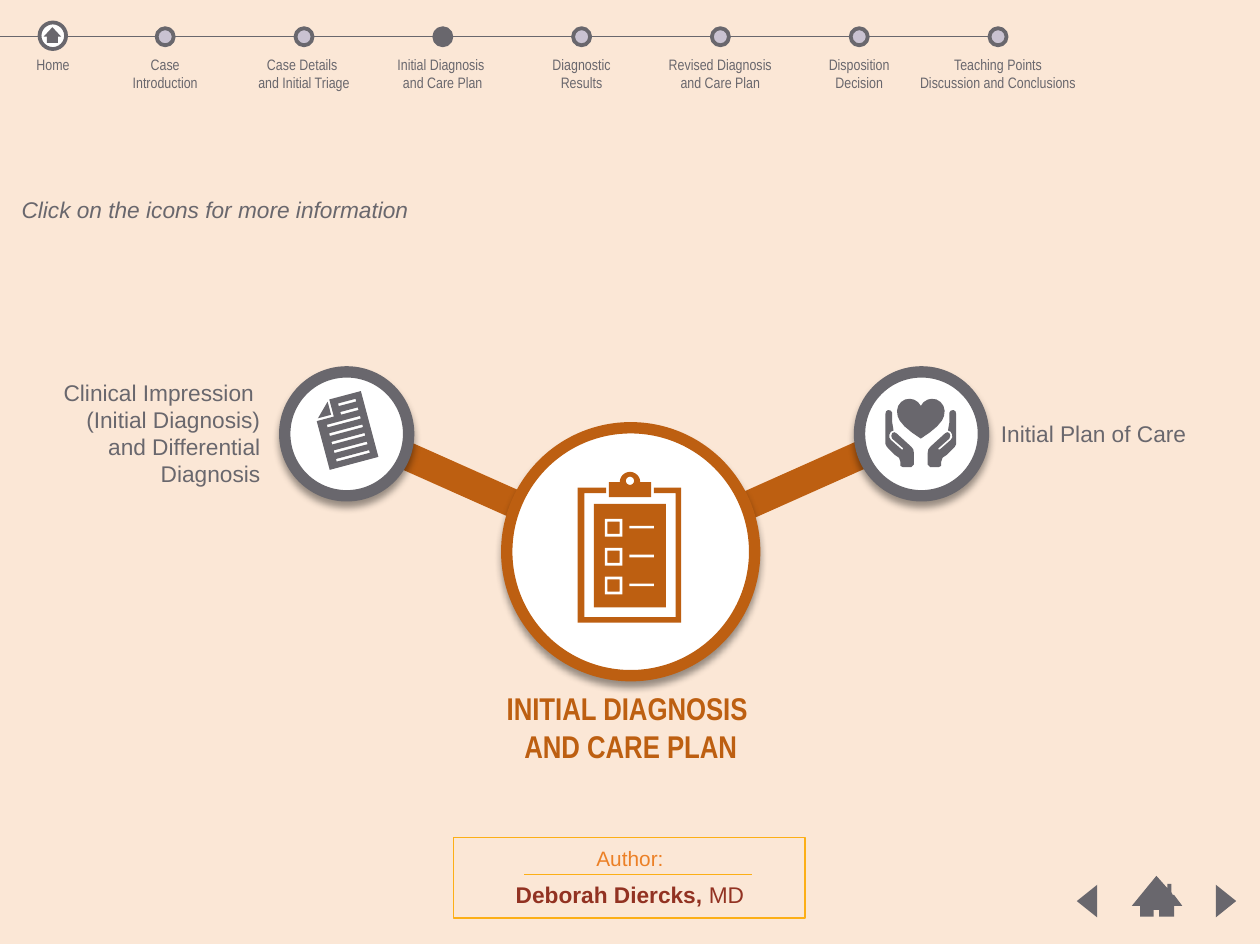
from dataclasses import dataclass
from math import cos, pi, sin
from typing import NamedTuple

from lxml.etree import SubElement
from pptx import Presentation
from pptx.dml.color import RGBColor
from pptx.enum.shapes import MSO_CONNECTOR, MSO_SHAPE
from pptx.enum.text import MSO_AUTO_SIZE, PP_ALIGN
from pptx.oxml.ns import qn
from pptx.util import Emu, Inches, Pt

COLUMNS, ROWS = 925, 693
CELL = Inches(0.01)
GREY, RUST, WHITE, LILAC = "69676D", "BD5F11", "FFFFFF", "C9C2D1"
CREAM, GOLD, ORANGE, MAROON = "FBE6D4", "FCAF17", "EC8026", "923222"
STOP_PITCH, TRACK_ROW, FIRST_STOP, STOP_SIZE = 101.9, 27, 121.3, 12.5
HEART_AXIS = 676

Points = list[tuple[float, float]]


class Box(NamedTuple):
    """Left, top, width and height in grid cells."""
    left: float
    top: float
    width: float
    height: float

    def emu(self) -> list[Emu]:
        return [cells(side) for side in self]


@dataclass
class Label:
    text: str
    box: Box
    size: float = 12
    color: str = GREY
    font: str = "Arial"
    align: PP_ALIGN = PP_ALIGN.CENTER
    bold: bool = False
    italic: bool = False
    regular_ending: str = ""
    margin: float | None = None


@dataclass
class Stop:
    text: str
    label_width: float
    fill: str = LILAC


STOPS = [
    Stop("Case\vIntroduction", 58),
    Stop("Case Details \vand Initial Triage", 78),
    Stop("Initial Diagnosis \nand Care Plan", 77, GREY),
    Stop("Diagnostic\vResults", 53),
    Stop("Revised Diagnosis\vand Care Plan", 86),
    Stop("Disposition\vDecision", 55),
    Stop("Teaching Points\vDiscussion and Conclusions", 125),
]
LABELS = [
    Label("Initial Plan of Care", Box(725, 303, 162, 30), align=PP_ALIGN.LEFT),
    Label("Clinical Impression \v(Initial Diagnosis)\vand Differential Diagnosis",
          Box(13, 273, 188, 91), align=PP_ALIGN.RIGHT),
    Label("INITIAL DIAGNOSIS \nAND CARE PLAN", Box(331, 501, 264, 66), 16.6, RUST,
          "Arial Narrow", bold=True),
    Label("Author:", Box(395, 616, 135, 29), 11, ORANGE),
    Label("Deborah Diercks, ", Box(366, 642, 193, 30), color=MAROON, bold=True,
          regular_ending="MD"),
    Label("Click on the icons for more information", Box(6, 139, 380, 30),
          align=PP_ALIGN.LEFT, italic=True),
]
HOUSE = [(862, 657), (861, 657), (860, 655), (860, 649), (857, 649), (857, 652), (849, 643),
         (831, 665), (837, 665), (837, 673), (847, 673), (847, 668), (851, 668), (851, 673),
         (862, 673), (862, 665), (868, 665)]
HALF_HEART = [(676, 298), (678, 295.3), (681, 293.4), (684, 292.8), (687.5, 293.3),
              (690.5, 295.2), (692.6, 298), (693.5, 301.5), (693, 305.5), (691.5, 308.8),
              (688, 313), (682.5, 317.6), (676, 322)]
RIGHT_HAND = [(696, 316), (697, 310), (697, 303), (698, 301.5), (700, 301), (701.5, 302),
              (702, 304), (702, 326), (701, 328), (695, 334), (692, 336), (691, 339),
              (691, 342), (689, 343), (683, 343), (681, 341), (681, 333), (681.5, 330),
              (683, 328), (694, 318), (695.5, 317.3), (697, 318), (697.7, 320), (697, 322),
              (689, 329), (689, 330), (690, 330), (698, 323), (699.2, 321), (699, 319),
              (698, 317)]
PAGE = [(248, 291), (272, 291), (272, 341), (235, 341), (235, 304), (248, 304)]
PAGE_FOLD = [(242, 296), (242, 306), (232, 306)]
PAGE_TILT = 345.1


def cells(count: float) -> Emu:
    return Emu(round(count * CELL))


def rgb(color: str) -> RGBColor:
    return RGBColor.from_string(color)


def paint(shape, fill: str | None, line: str | None = None, weight: float = 0) -> None:
    shape.shadow.inherit = False
    if fill:
        shape.fill.solid()
        shape.fill.fore_color.rgb = rgb(fill)
    else:
        shape.fill.background()
    if line:
        shape.line.color.rgb = rgb(line)
        shape.line.width = Pt(weight)
    else:
        shape.line.fill.background()


def add_preset(shapes, kind: MSO_SHAPE, box: Box, fill: str | None,
               line: str | None = None, weight: float = 0):
    shape = shapes.add_shape(kind, *box.emu())
    paint(shape, fill, line, weight)
    return shape


def add_outline(shapes, contours: list[Points], fill: str, tilt: float = 0) -> None:
    """Fill the first contour; the further ones cut holes in it."""
    first, *holes = [[(cells(x), cells(y)) for x, y in contour] for contour in contours]
    builder = shapes.build_freeform(*first[0])
    builder.add_line_segments(first[1:])
    for hole in holes:
        builder.move_to(*hole[0])
        builder.add_line_segments(hole[1:])
    shape = builder.convert_to_shape()
    shape.rotation = tilt
    paint(shape, fill)


def add_line(shapes, start: tuple, end: tuple, color: str, weight: float) -> None:
    line = shapes.add_connector(MSO_CONNECTOR.STRAIGHT, *map(cells, start + end))
    line.line.color.rgb = rgb(color)
    line.line.width = Pt(weight)
    SubElement(line.element.spPr, qn("a:effectLst"))


def add_label(shapes, label: Label) -> None:
    frame = shapes.add_textbox(*label.box.emu()).text_frame
    frame.text = label.text
    frame.word_wrap = label.margin is None
    frame.auto_size = MSO_AUTO_SIZE.SHAPE_TO_FIT_TEXT
    if label.margin is not None:
        frame.margin_left = frame.margin_right = cells(label.margin)
        frame.margin_top = frame.margin_bottom = cells(label.margin)
    if label.regular_ending:
        frame.paragraphs[-1].add_run().text = label.regular_ending
    for paragraph in frame.paragraphs:
        paragraph.alignment = label.align
        for run in paragraph.runs:
            run.font.name, run.font.size = label.font, Pt(label.size)
            run.font.color.rgb = rgb(label.color)
            run.font.bold = label.bold and run.text != label.regular_ending
            run.font.italic = label.italic


def add_stop_label(shapes, text: str, center: float, width: float, height: float) -> None:
    box = Box(center - width / 2, 36.5, width, height)
    add_label(shapes, Label(text, box, 8, font="Arial Narrow", margin=4))


def set_alpha(parent, percent: int) -> None:
    SubElement(parent, qn("a:alpha"), val=str(percent * 1000))


def add_badge(shapes, box: Box, color: str):
    """Start an icon group with its ringed, shadowed disc."""
    icon = shapes.add_group_shape().shapes
    disc = add_preset(icon, MSO_SHAPE.OVAL, box, WHITE, color, 6)
    effects = disc.element.spPr.find(qn("a:effectLst"))
    shadow = SubElement(effects, qn("a:outerShdw"), blurRad=str(Pt(4)), dist=str(Pt(3)),
                        dir="5400000", algn="t", rotWithShape="0")
    set_alpha(SubElement(shadow, qn("a:srgbClr"), val="000000"), 40)
    return icon


def box_contour(left: float, top: float, width: float, height: float) -> Points:
    right, bottom = left + width, top + height
    return [(left, top), (right, top), (right, bottom), (left, bottom)]


def arc(x: float, y: float, radius: float, start: float, end: float) -> Points:
    steps = [start + (end - start) * step / 24 for step in range(25)]
    return [(x + radius * cos(angle), y + radius * sin(angle)) for angle in steps]


def mirror(points: Points) -> Points:
    return [(2 * HEART_AXIS - x, y) for x, y in points]


def draw_clipboard(shapes) -> None:
    icon = add_badge(shapes, Box(372, 314, 182, 182), RUST)
    add_preset(icon, MSO_SHAPE.RECTANGLE, Box(436, 370, 53, 76), RUST)
    add_outline(icon, [[(480, 358), (480, 362), (496, 362), (496, 453), (429, 453),
                        (429, 362), (445, 362), (445, 358), (424, 358), (424, 457),
                        (500, 457), (500, 358)]], RUST)
    clip = [(447, 354), *arc(462.5, 354, 7.5, pi, 2 * pi), (478, 354), (478, 365), (447, 365)]
    add_outline(icon, [clip, arc(462.5, 353, 3, 0, 2 * pi)], RUST)
    for item in range(3):
        top = 381 + 21.2 * item
        add_outline(icon, [box_contour(444, top, 13, 13),
                           box_contour(446, top + 2, 9, 9)], WHITE)
        add_preset(icon, MSO_SHAPE.RECTANGLE, Box(462, top + 5, 18, 2), WHITE)


def draw_document(shapes) -> None:
    icon = add_badge(shapes, Box(209, 273, 91, 91), GREY)
    add_outline(icon, [PAGE_FOLD], GREY, PAGE_TILT)
    lefts = [253.5] * 2 + [241.5] * 5
    rows = [box_contour(left, 295.5 + 6.5 * row, 266.7 - left, 2)
            for row, left in enumerate(lefts)]
    add_outline(icon, [PAGE, *rows], GREY, PAGE_TILT)


def draw_caring_hands(shapes) -> None:
    icon = add_badge(shapes, Box(631, 273, 91, 91), GREY)
    for part in (HALF_HEART + mirror(HALF_HEART)[::-1], RIGHT_HAND, mirror(RIGHT_HAND)):
        add_outline(icon, [part], GREY)


def draw_page_buttons(shapes) -> None:
    buttons = shapes.add_group_shape().shapes
    add_outline(buttons, [HOUSE], GREY)
    for left, turn in ((888, 90), (786, 270)):
        arrow = add_preset(buttons, MSO_SHAPE.ISOSCELES_TRIANGLE, Box(left, 654, 24, 15), GREY)
        arrow.rotation = turn


def draw_track(shapes) -> None:
    add_line(shapes, (0, TRACK_ROW), (726, TRACK_ROW), GREY, 0.75)
    for index, stop in enumerate(STOPS):
        center = FIRST_STOP + STOP_PITCH * index
        dot = Box(center - STOP_SIZE / 2, TRACK_ROW - STOP_SIZE / 2, STOP_SIZE, STOP_SIZE)
        add_preset(shapes, MSO_SHAPE.OVAL, dot, stop.fill, GREY, 2)
        add_stop_label(shapes, stop.text, center, stop.label_width, 35)
    home = shapes.add_group_shape().shapes
    add_preset(home, MSO_SHAPE.OVAL, Box(29, 16.5, 19.5, 19.5), WHITE, GREY, 2)
    add_preset(home, MSO_SHAPE.ISOSCELES_TRIANGLE, Box(32, 20, 13, 7), GREY)
    add_preset(home, MSO_SHAPE.RECTANGLE, Box(34.5, 26.5, 8, 5), GREY)
    add_stop_label(shapes, "Home", 39, 40, 21)


def main() -> None:
    deck = Presentation()
    deck.slide_width, deck.slide_height = cells(COLUMNS), cells(ROWS)
    shapes = deck.slides.add_slide(deck.slide_layouts[6]).shapes
    backdrop = add_preset(shapes, MSO_SHAPE.RECTANGLE, Box(0, 0, COLUMNS, ROWS), CREAM)
    set_alpha(backdrop.element.spPr.find(qn("a:solidFill"))[0], 95)
    for start, end in (((380, 371), (297, 334)), ((549, 371), (632, 334))):
        add_line(shapes, start, end, RUST, 15)
    draw_clipboard(shapes)
    draw_document(shapes)
    draw_caring_hands(shapes)
    draw_page_buttons(shapes)
    draw_track(shapes)
    add_preset(shapes, MSO_SHAPE.RECTANGLE, Box(333, 615, 258, 59), None, GOLD, 0.75)
    add_line(shapes, (385, 642), (552, 642), GOLD, 0.25)
    for label in LABELS:
        add_label(shapes, label)
    deck.save("out.pptx")


if __name__ == "__main__":
    main()
